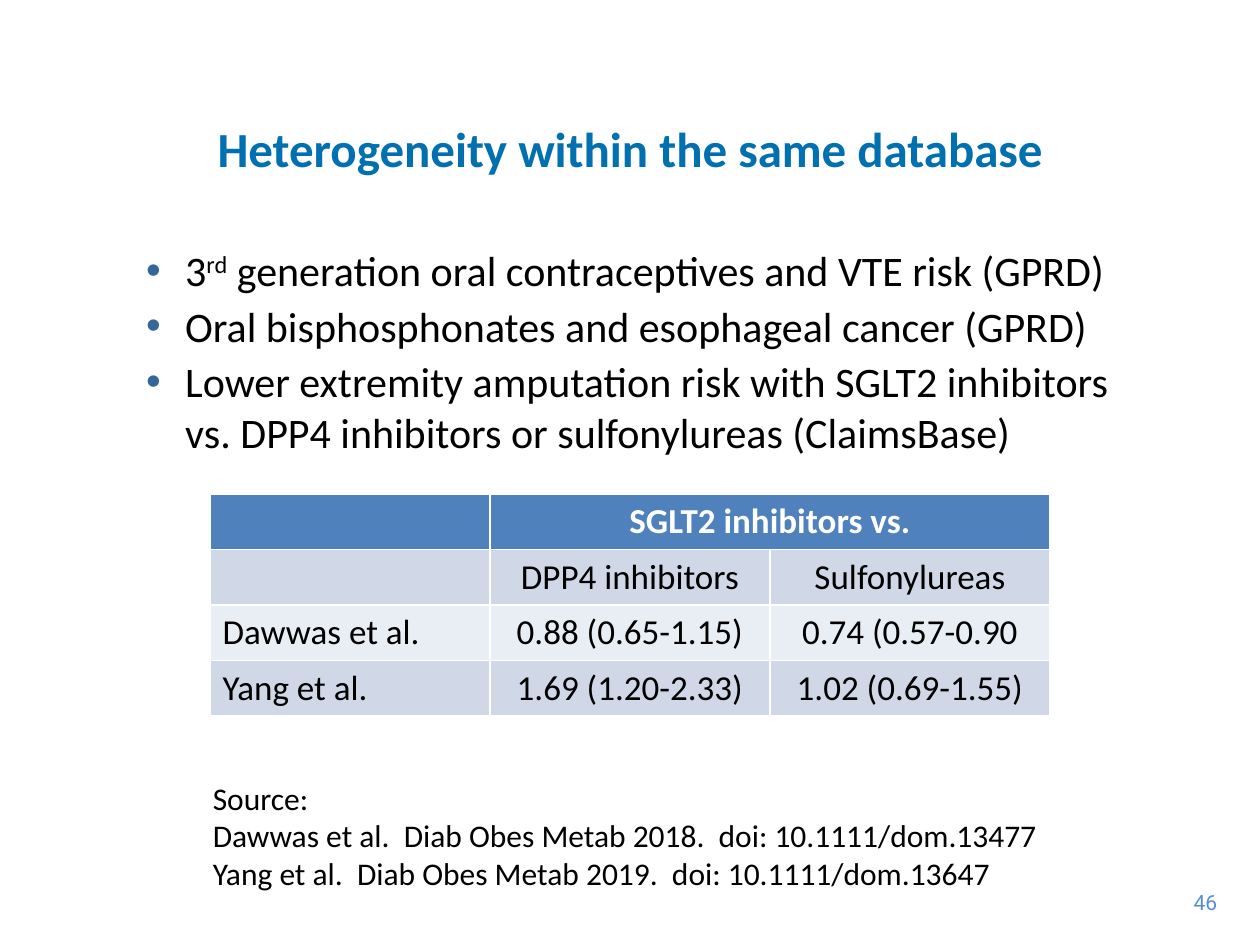
from pptx import Presentation
from pptx.dml.color import RGBColor
from pptx.enum.text import MSO_ANCHOR, MSO_AUTO_SIZE, PP_ALIGN
from pptx.oxml.ns import qn
from pptx.util import Inches, Pt
from lxml import etree

LEFT, MID, RIGHT = PP_ALIGN.LEFT, PP_ALIGN.CENTER, PP_ALIGN.RIGHT
BLACK = RGBColor(0, 0, 0)
WHITE = RGBColor(255, 255, 255)
BLUE = RGBColor(0x00, 0x70, 0xB0)
PALE = RGBColor(0x55, 0x8E, 0xD5)
HEAD = RGBColor(0x4F, 0x81, 0xBD)
DARK = RGBColor(0xD0, 0xD8, 0xE8)
LIGHT = RGBColor(0xE9, 0xED, 0xF4)

deck = Presentation()
deck.slide_width, deck.slide_height = Inches(10), Inches(7.5)
wide, high = deck.slide_width, deck.slide_height
slide = deck.slides.add_slide(deck.slide_layouts[1])


def place(shape, left, top, width, height):
    shape.left, shape.top = Inches(left), Inches(top)
    shape.width, shape.height = Inches(width), Inches(height)


def style(para, size, color, align=LEFT, bold=False, face="Calibri"):
    para.alignment = align
    font = para.font
    font.name, font.size, font.bold = face, Pt(size), bold
    font.color.rgb = color


title = slide.shapes.title
place(title, 0.5, 0.55, 9, 1.25)
title.text_frame.text = "Heterogeneity within the same database"
title.text_frame.vertical_anchor = MSO_ANCHOR.MIDDLE
style(title.text_frame.paragraphs[0], 28, BLUE, MID, True)

body = slide.placeholders[1]
place(body, 1.06, 1.89, 7.94, 2.69)
frame = body.text_frame
frame.auto_size = MSO_AUTO_SIZE.NONE
points = [
    ["3", "rd", " generation oral contraceptives and VTE risk (GPRD)"],
    ["Oral bisphosphonates and esophageal cancer (GPRD)"],
    ["Lower extremity amputation risk with SGLT2 inhibitors "
     "vs. DPP4 inhibitors or sulfonylureas (ClaimsBase)"],
]
for i, parts in enumerate(points):
    para = frame.paragraphs[0] if i == 0 else frame.add_paragraph()
    for part in parts:
        run = para.add_run()
        run.text = part
        if part == "rd":
            run._r.get_or_add_rPr().set("baseline", "30000")
    para.space_before, para.space_after = Pt(0), Pt(3)
    props = para._p.get_or_add_pPr()
    props.set("marL", str(Inches(0.31)))
    props.set("indent", str(Inches(-0.31)))
    tint = etree.SubElement(props, qn("a:buClr"))
    etree.SubElement(tint, qn("a:srgbClr")).set("val", "336699")
    etree.SubElement(props, qn("a:buFont")).set("typeface", "Arial")
    etree.SubElement(props, qn("a:buChar")).set("char", "•")
    style(para, 24, BLACK)

rows = [
    ["", "SGLT2 inhibitors vs.", ""],
    ["", "DPP4 inhibitors", "Sulfonylureas"],
    ["Dawwas et al.", "0.88 (0.65-1.15)", "0.74 (0.57-0.90"],
    ["Yang et al.", "1.69 (1.20-2.33)", "1.02 (0.69-1.55)"],
]
fills = [HEAD, DARK, LIGHT, DARK]
grid = slide.shapes.add_table(
    len(rows), 3, wide // 6, Inches(3.92), wide * 2 // 3, Inches(1.73)).table
grid.cell(0, 1).merge(grid.cell(0, 2))
for r, row in enumerate(rows):
    for c, text in enumerate(row):
        cell = grid.cell(r, c)
        cell.text = text
        cell.fill.solid()
        cell.fill.fore_color.rgb = fills[r]
        style(cell.text_frame.paragraphs[0], 20, BLACK if r else WHITE,
              MID if c else LEFT, r == 0)

source = [
    "Source:",
    "Dawwas et al.  Diab Obes Metab 2018.  doi: 10.1111/dom.13477",
    "Yang et al.  Diab Obes Metab 2019.  doi: 10.1111/dom.13647",
]
notes = [
    (1.59, 6.13, 6.82, 1.01, source, 18, BLACK, LEFT, "Calibri"),
    (9.35, 7.01, 0.41, 0.3, ["46"], 12, PALE, RIGHT, "Roboto"),
]
for left, top, width, height, lines, size, color, align, face in notes:
    box = slide.shapes.add_textbox(0, 0, wide, high)
    place(box, left, top, width, height)
    box.text_frame.word_wrap = False
    box.text_frame.text = "\n".join(lines)
    for para in box.text_frame.paragraphs:
        style(para, size, color, align, face=face)

deck.save("out.pptx")
